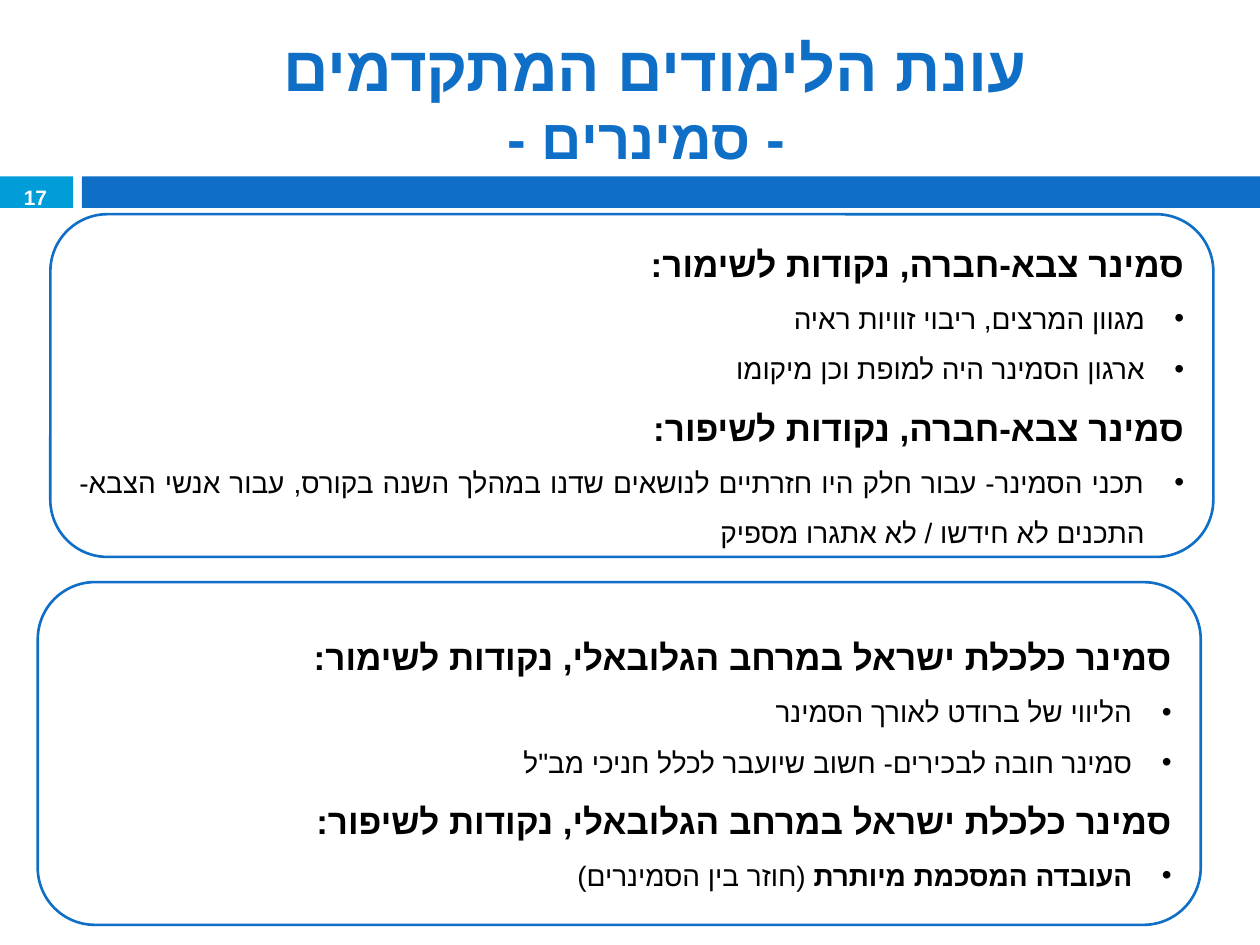
from lxml.etree import SubElement
from pptx import Presentation
from pptx.dml.color import RGBColor
from pptx.enum.shapes import MSO_SHAPE
from pptx.enum.text import MSO_ANCHOR, PP_ALIGN
from pptx.oxml.ns import qn
from pptx.util import Inches, Pt

BLUE, CYAN, WHITE, BLACK = "0F6FC6", "009DD9", "FFFFFF", "000000"
BULLET_INDENT = Inches(0.31)

TITLE_LINES = [("עונת הלימודים המתקדמים ", 36), ("- סמינרים -", 32)]
PAGE_NUMBER = "17"
BANDS = [(0, 0.58, CYAN), (0.65, 9.35, BLUE)]  # left, width, colour

# Each panel: left, top, then sections of (heading, bullets);
# a bullet is a list of (text, bold) runs.
PANELS = [
    (0.4, 1.7, [
        ("סמינר צבא-חברה, נקודות לשימור:", [
            [("מגוון המרצים, ריבוי זוויות ראיה", False)],
            [("ארגון הסמינר היה למופת וכן מיקומו", False)],
        ]),
        ("סמינר צבא-חברה, נקודות לשיפור:", [
            [("תכני הסמינר- עבור חלק היו חזרתיים לנושאים שדנו במהלך השנה בקורס, "
              "עבור אנשי הצבא- התכנים לא חידשו / לא אתגרו מספיק", False)],
        ]),
    ]),
    (0.3, 4.62, [
        ("סמינר כלכלת ישראל במרחב הגלובאלי, נקודות לשימור:", [
            [("הליווי של ברודט לאורך הסמינר", False)],
            [('סמינר חובה לבכירים- חשוב שיועבר לכלל חניכי מב"ל', False)],
        ]),
        ("סמינר כלכלת ישראל במרחב הגלובאלי, נקודות לשיפור:", [
            [("העובדה המסכמת מיותרת ", True), ("(חוזר בין הסמינרים)", False)],
        ]),
    ]),
]


def rgb(color):
    return RGBColor.from_string(color)


def add_box(slide, kind, left, top, width, height, fill, line=None):
    shape = slide.shapes.add_shape(
        kind, Inches(left), Inches(top), Inches(width), Inches(height))
    shape.shadow.inherit = False
    shape.fill.solid()
    shape.fill.fore_color.rgb = rgb(fill)
    if line:
        shape.line.color.rgb = rgb(line)
        shape.line.width = Pt(1.5)
    else:
        shape.line.fill.background()
    return shape


def add_text_box(slide, left, top, width, height):
    """Add a wrapping, vertically centred box and return its first paragraph."""
    box = slide.shapes.add_textbox(
        Inches(left), Inches(top), Inches(width), Inches(height))
    frame = box.text_frame
    frame.word_wrap = True
    frame.vertical_anchor = MSO_ANCHOR.MIDDLE
    return frame.paragraphs[0]


def set_right_to_left(paragraph, alignment):
    paragraph.alignment = alignment
    paragraph._p.get_or_add_pPr().set("rtl", "1")


def add_run(paragraph, text, size, color, bold, font="Arial"):
    run = paragraph.add_run()
    run.text = text
    run.font.size = Pt(size)
    run.font.bold = bold
    run.font.name = font
    run.font.color.rgb = rgb(color)
    properties = run._r.get_or_add_rPr()
    properties.set("lang", "he-IL")
    SubElement(properties, qn("a:cs")).set("typeface", "Arial")


def add_bullet(paragraph):
    properties = paragraph._p.get_or_add_pPr()
    properties.set("marL", str(BULLET_INDENT))
    properties.set("indent", str(-BULLET_INDENT))
    SubElement(properties, qn("a:buFont")).set("typeface", "Arial")
    SubElement(properties, qn("a:buChar")).set("char", "•")


def add_panel(slide, left, top, sections):
    panel = add_box(slide, MSO_SHAPE.ROUNDED_RECTANGLE,
                    left, top, 9.23, 2.72, WHITE, BLUE)
    frame = panel.text_frame
    frame.word_wrap = True
    frame.vertical_anchor = MSO_ANCHOR.MIDDLE
    lines = []
    for heading, bullets in sections:
        lines.append(([(heading, True)], 20, False))
        lines += [(runs, 16, True) for runs in bullets]
    for index, (runs, size, bulleted) in enumerate(lines):
        paragraph = frame.add_paragraph() if index else frame.paragraphs[0]
        set_right_to_left(paragraph, PP_ALIGN.JUSTIFY)
        paragraph.line_spacing = 1.5
        if bulleted:
            add_bullet(paragraph)
        for text, bold in runs:
            add_run(paragraph, text, size, BLACK, bold)


def main():
    presentation = Presentation()
    presentation.slide_width = Inches(10)
    presentation.slide_height = Inches(7.5)
    slide = presentation.slides.add_slide(presentation.slide_layouts[6])

    for left, width, color in BANDS:
        add_box(slide, MSO_SHAPE.RECTANGLE, left, 1.4, width, 0.25, color)

    title = add_text_box(slide, 0.67, 0.25, 8.92, 1.08)
    set_right_to_left(title, PP_ALIGN.CENTER)
    for index, (text, size) in enumerate(TITLE_LINES):
        if index:
            title.add_line_break()
        add_run(title, text, size, BLUE, True, "Calibri")

    number = add_text_box(slide, -0.01, 1.43, 0.58, 0.27)
    set_right_to_left(number, PP_ALIGN.CENTER)
    add_run(number, PAGE_NUMBER, 11.9, WHITE, True, "Calibri")

    for left, top, sections in PANELS:
        add_panel(slide, left, top, sections)

    presentation.save("out.pptx")


if __name__ == "__main__":
    main()
